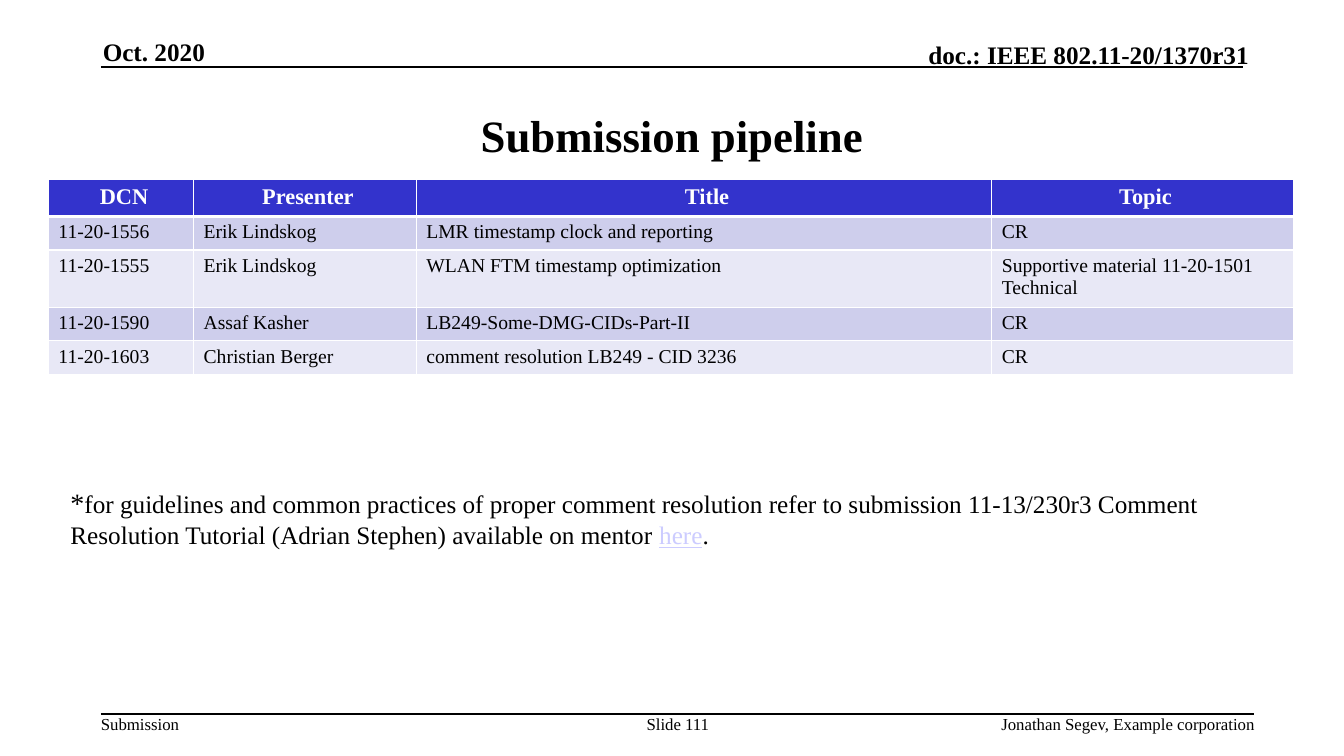
from lxml.etree import SubElement
from pptx import Presentation
from pptx.dml.color import RGBColor
from pptx.enum.shapes import MSO_CONNECTOR
from pptx.enum.text import MSO_ANCHOR, PP_ALIGN
from pptx.oxml.ns import qn
from pptx.util import Inches, Pt

THEME = {
    "font": "Times New Roman",
    "ink": "000000", "white": "FFFFFF", "link": "CCCCFF",
    "head": "3333CC", "bands": ("CECEEC", "E8E8F6"),
    "title": 32, "star": 20, "body": 18, "label": 16, "cell": 14, "foot": 12,
}
LEFT, MID, RIGHT = PP_ALIGN.LEFT, PP_ALIGN.CENTER, PP_ALIGN.RIGHT
TOP, CENTER, LOW = MSO_ANCHOR.TOP, MSO_ANCHOR.MIDDLE, MSO_ANCHOR.BOTTOM

deck = Presentation()
deck.slide_width, deck.slide_height = Inches(13.33), Inches(7.5)
slide = deck.slides.add_slide(deck.slide_layouts[6])
# The grid has 40 columns and 22.5 rows
COL, ROW = deck.slide_width / 40, deck.slide_height / 22.5


def place(x, y, wide, high):
    """Turn grid columns and rows into slide lengths."""
    return int(x * COL), int(y * ROW), int(wide * COL), int(high * ROW)


def write(para, text, size="body", color="ink", bold=False, under=False, align=LEFT):
    """Add one run of text to a paragraph."""
    para.alignment = align
    run = para.add_run()
    run.text = text
    font = run.font
    font.name, font.size = THEME["font"], Pt(THEME[size])
    font.bold, font.underline = bold, under
    font.color.rgb = RGBColor.from_string(THEME[color])


# Header and footer rules
for y, end in ((2, 37), (21.25, 37.32)):
    x, top, wide, _ = place(3, y, end - 3, 0)
    rule = slide.shapes.add_connector(MSO_CONNECTOR.STRAIGHT, x, top, x + wide, top)
    rule.line.color.rgb = RGBColor.from_string(THEME["ink"])
    rule.line.width = Pt(1)
    SubElement(rule._element.spPr, qn("a:effectLst"))

# Text boxes: place, side inset, anchor, format, runs
strong = {"bold": True}
small = {"size": "foot"}
boxes = (
    ((3.06, 1.08, 8.19, 0.9), 0, LOW, strong, [("Oct. 2020", {})]),
    ((21.87, 1.17, 15.3, 0.9), 0, LOW, {**strong, "align": RIGHT},
     [("doc.: IEEE 802.11-20/1370r31", {})]),
    ((3, 2.25, 34, 3.5), 0.1, CENTER, {**strong, "size": "title", "align": MID},
     [("Submission pipeline", {})]),
    ((3, 21.25, 2.4, 0.6), 0, TOP, small, [("Submission", {})]),
    ((19.02, 21.25, 2.31, 1.2), 0, TOP, {**small, "align": MID}, [("Slide 111", {})]),
    ((23.43, 21.25, 13.92, 0.6), 0, TOP, {**small, "align": RIGHT},
     [("Jonathan Segev, Example corporation", {})]),
    ((1.8, 14.31, 35.55, 3.24), 0.1, TOP, {}, [
        ("*", {"size": "star"}),
        ("for guidelines and common practices of proper comment resolution refer to "
         "submission 11-13/230r3 Comment Resolution Tutorial (Adrian Stephen) "
         "available on mentor ", {}),
        ("here", {"color": "link", "under": True}),
        (".", {}),
    ]),
)
for spot, pad, anchor, form, runs in boxes:
    frame = slide.shapes.add_textbox(*place(*spot)).text_frame
    frame.word_wrap = True
    frame.vertical_anchor = anchor
    frame.margin_left = frame.margin_right = Inches(pad)
    frame.margin_top = frame.margin_bottom = Inches(pad / 2)
    for text, extra in runs:
        write(frame.paragraphs[0], text, **{**form, **extra})

# Pipeline table
data = (
    ("DCN", "Presenter", "Title", "Topic"),
    ("11-20-1556", "Erik Lindskog", "LMR timestamp clock and reporting", "CR"),
    ("11-20-1555", "Erik Lindskog", "WLAN FTM timestamp optimization",
     "Supportive material 11-20-1501 Technical"),
    ("11-20-1590", "Assaf Kasher", "LB249-Some-DMG-CIDs-Part-II", "CR"),
    ("11-20-1603", "Christian Berger", "comment resolution LB249 - CID 3236", "CR"),
)
widths = (4.32, 6.63, 17.13, 8.97)
heights = (1.05, 0.93, 1.59, 0.93, 0.93)
spot = place(1.44, 5.34, sum(widths), sum(heights))
table = slide.shapes.add_table(len(data), len(widths), *spot).table
for col, wide in zip(table.columns, widths):
    col.width = int(wide * COL)
for row, high in zip(table.rows, heights):
    row.height = int(high * ROW)

for r, line in enumerate(data):
    head = r == 0
    fill = THEME["head"] if head else THEME["bands"][(r - 1) % 2]
    form = ({"size": "label", "color": "white", "bold": True, "align": MID}
            if head else {"size": "cell"})
    # A thick edge parts the head from the body
    edges = {"lnL": 1, "lnR": 1, "lnT": 3 if r == 1 else 1, "lnB": 3 if head else 1}
    for c, text in enumerate(line):
        cell = table.cell(r, c)
        cell.margin_left = Inches(0.1)
        cell.margin_right = Inches(0.04 if head else 0.1)
        cell.margin_top = cell.margin_bottom = Inches(0.05)
        for side, width in edges.items():
            edge = SubElement(cell._tc.get_or_add_tcPr(), qn("a:" + side), w=str(Pt(width)))
            paint = SubElement(edge, qn("a:solidFill"))
            SubElement(paint, qn("a:srgbClr"), val=THEME["white"])
        cell.fill.solid()
        cell.fill.fore_color.rgb = RGBColor.from_string(fill)
        write(cell.text_frame.paragraphs[0], text, **form)

deck.save("out.pptx")
